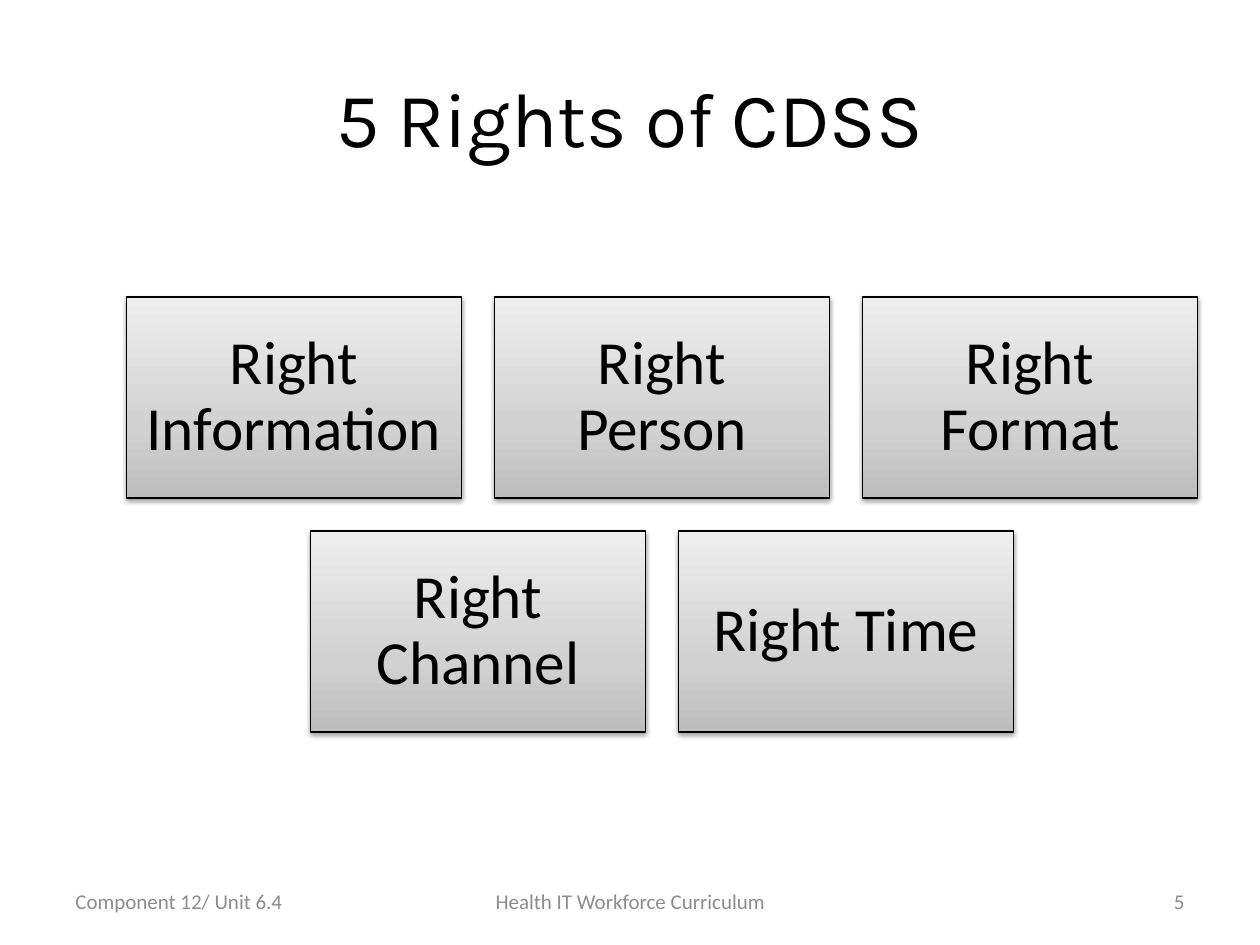
"""Build the slide showing the five rights of CDSS as two centred rows of boxes."""
from copy import deepcopy
from dataclasses import dataclass

from lxml.etree import SubElement
from pptx import Presentation
from pptx.dml.color import RGBColor
from pptx.enum.shapes import MSO_SHAPE
from pptx.enum.text import MSO_ANCHOR, PP_ALIGN
from pptx.oxml.ns import qn
from pptx.util import Emu, Pt

TITLE = "5 Rights of CDSS"
RIGHTS = [
    ["Right Information", "Right Person", "Right Format"],
    ["Right Channel", "Right Time"],
]
FOOTERS = [
    ("Component 12/ Unit 6.4", 63, 294, PP_ALIGN.LEFT),
    ("Health IT Workforce Curriculum", 431, 399, PP_ALIGN.CENTER),
    ("5", 903, 294, PP_ALIGN.RIGHT),
]


@dataclass(frozen=True)
class Theme:
    title_font: str = "Karla"
    body_font: str = "Calibri"
    title_size: int = 44
    box_size: int = 35
    footer_size: int = 12
    ink: str = "000000"
    muted: str = "8C8C8C"
    gradient: tuple = ((0, "BDBDBD"), (0.35, "D1D1D1"), (1, "EEEEEE"))


THEME = Theme()
SLIDE_WIDTH, SLIDE_HEIGHT = 1260, 945
TITLE_AREA = (63, 38, 1134, 158)
BOX_WIDTH, BOX_HEIGHT, BOX_GAP, BOX_INSET = 335, 201, 33, 19
GRID_CENTER, GRID_TOP = 662, 297
FOOTER_TOP, FOOTER_HEIGHT = 876, 50


def px(length):
    return Emu(round(length * 914400 / 126))


def write(shape, text, font, size, color, align):
    frame = shape.text_frame
    frame.text = text
    frame.word_wrap = True
    frame.vertical_anchor = MSO_ANCHOR.MIDDLE
    paragraph = frame.paragraphs[0]
    paragraph.alignment = align
    run_font = paragraph.runs[0].font
    run_font.name = font
    run_font.size = Pt(size)
    run_font.color.rgb = RGBColor.from_string(color)
    return frame


def fill_gradient(shape):
    shape.fill.gradient()
    shape.fill.gradient_angle = 90
    stop_list = shape._element.spPr.find(qn("a:gradFill")).find(qn("a:gsLst"))
    stop_list.insert(1, deepcopy(stop_list[0]))
    for stop, (position, color) in zip(shape.fill.gradient_stops, THEME.gradient):
        stop.position = position
        stop.color.rgb = RGBColor.from_string(color)


def add_shadow(shape):
    shape.shadow.inherit = False
    effects = shape._element.spPr.find(qn("a:effectLst"))
    shadow = SubElement(
        effects, qn("a:outerShdw"), blurRad=str(Pt(3.1)), dist=str(Pt(1.6)),
        dir="5400000", rotWithShape="0",
    )
    color = SubElement(shadow, qn("a:srgbClr"), val=THEME.ink)
    SubElement(color, qn("a:alpha"), val="38000")


def add_box(slide, text, left, top):
    shape = slide.shapes.add_shape(
        MSO_SHAPE.RECTANGLE, *map(px, (left, top, BOX_WIDTH, BOX_HEIGHT))
    )
    fill_gradient(shape)
    shape.line.color.rgb = RGBColor.from_string(THEME.ink)
    shape.line.width = Pt(0.75)
    add_shadow(shape)
    frame = write(shape, text, THEME.body_font, THEME.box_size, THEME.ink, PP_ALIGN.CENTER)
    frame.margin_left = frame.margin_right = px(BOX_INSET)
    frame.margin_top = frame.margin_bottom = px(BOX_INSET)
    frame.paragraphs[0].line_spacing = 0.9


def main():
    presentation = Presentation()
    presentation.slide_width = px(SLIDE_WIDTH)
    presentation.slide_height = px(SLIDE_HEIGHT)
    slide = presentation.slides.add_slide(presentation.slide_layouts[5])

    title = slide.shapes.title
    title.left, title.top, title.width, title.height = map(px, TITLE_AREA)
    write(title, TITLE, THEME.title_font, THEME.title_size, THEME.ink, PP_ALIGN.CENTER)

    for row, labels in enumerate(RIGHTS):
        row_width = len(labels) * (BOX_WIDTH + BOX_GAP) - BOX_GAP
        top = GRID_TOP + row * (BOX_HEIGHT + BOX_GAP)
        for column, label in enumerate(labels):
            left = GRID_CENTER - row_width / 2 + column * (BOX_WIDTH + BOX_GAP)
            add_box(slide, label, left, top)

    for text, left, width, align in FOOTERS:
        footer = slide.shapes.add_textbox(*map(px, (left, FOOTER_TOP, width, FOOTER_HEIGHT)))
        write(footer, text, THEME.body_font, THEME.footer_size, THEME.muted, align)

    presentation.save("out.pptx")


if __name__ == "__main__":
    main()
